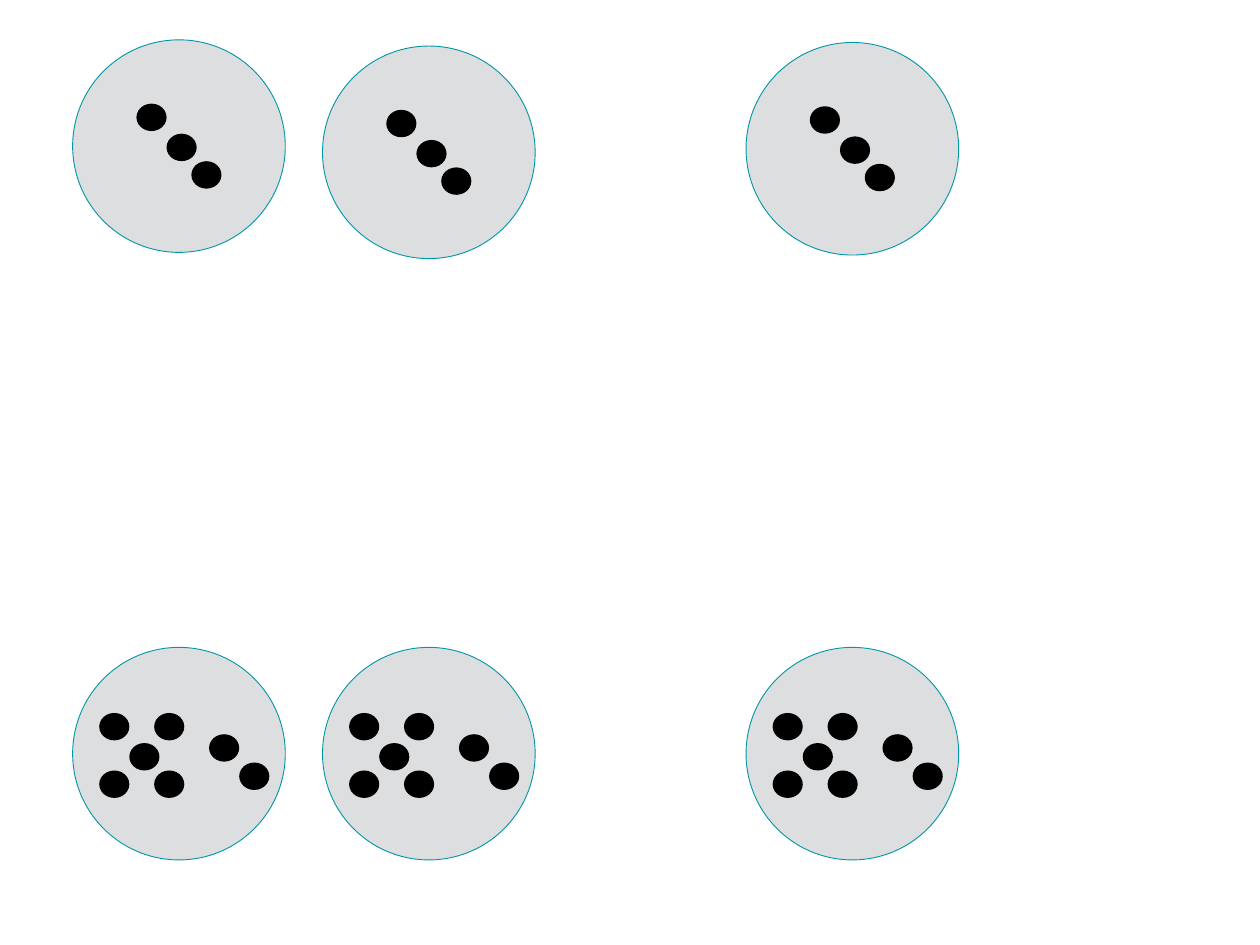
"""Build a slide of six round plates holding three or seven black dots."""
from pptx import Presentation
from pptx.dml.color import RGBColor
from pptx.enum.shapes import MSO_SHAPE
from pptx.util import Inches, Pt

PLATE_GREY = RGBColor(0xDC, 0xDE, 0xE0)
RIM_TEAL = RGBColor(0x00, 0x97, 0xA7)
DOT_BLACK = RGBColor(0x00, 0x00, 0x00)

PLATE_SIZE = 2.4
DOT_WIDTH, DOT_HEIGHT = 0.34, 0.31
COLUMN_LEFTS = (0.82, 3.64, 8.42)
THREE_DOTS = ((0.72, 0.72), (1.06, 1.06), (1.34, 1.37))
SEVEN_DOTS = ((0.3, 1.39), (0.3, 0.74), (0.64, 1.08), (0.92, 1.39),
              (0.92, 0.74), (1.54, 0.98), (1.88, 1.3))
ROWS = (((0.45, 0.52, 0.48), THREE_DOTS), ((7.31, 7.31, 7.31), SEVEN_DOTS))


def add_ellipse(group, left, top, width, height, color):
    ellipse = group.shapes.add_shape(MSO_SHAPE.OVAL, Inches(left), Inches(top),
                                     Inches(width), Inches(height))
    ellipse.shadow.inherit = False
    ellipse.fill.solid()
    ellipse.fill.fore_color.rgb = color
    ellipse.line.fill.background()
    return ellipse


deck = Presentation()
deck.slide_width, deck.slide_height = Inches(14.22), Inches(10.67)
page = deck.slides.add_slide(deck.slide_layouts[6])

for plate_tops, dots in ROWS:
    for left, top in zip(COLUMN_LEFTS, plate_tops):
        group = page.shapes.add_group_shape()
        plate = add_ellipse(group, left, top, PLATE_SIZE, PLATE_SIZE, PLATE_GREY)
        plate.line.color.rgb = RIM_TEAL
        plate.line.width = Pt(0.75)
        for across, down in dots:
            add_ellipse(group, left + across, top + down, DOT_WIDTH, DOT_HEIGHT, DOT_BLACK)

deck.save("out.pptx")
